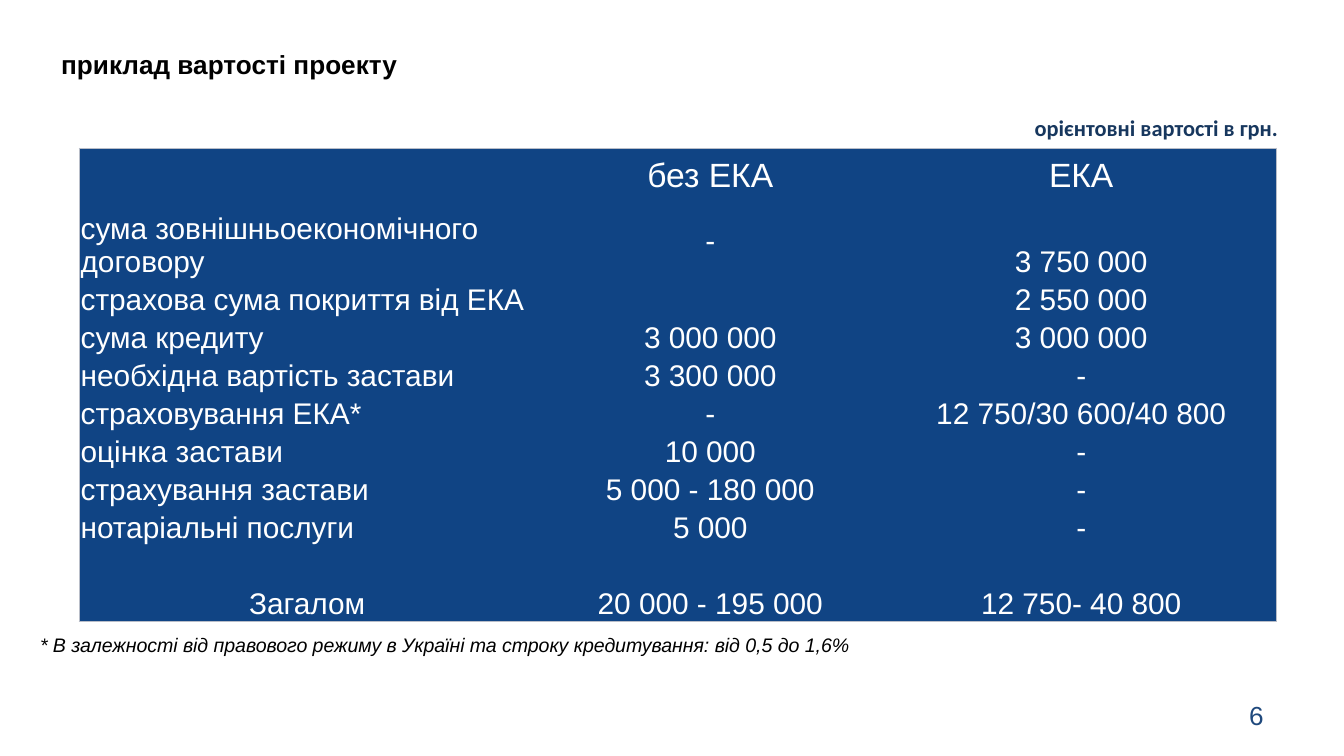
from lxml.etree import SubElement
from pptx import Presentation
from pptx.dml.color import RGBColor
from pptx.enum.text import MSO_ANCHOR as Anchor, MSO_AUTO_SIZE as AutoSize, PP_ALIGN as Align
from pptx.oxml.ns import qn
from pptx.util import Emu, Pt

EMU_PER_PX = 4572
NAVY, BLUE, PANEL, EDGE = "17375E", "1F497D", "104484", "B8BDC8"
COLUMNS = (678, 522, 582)
COSTS = [
    ("", "без ЕКА", "ЕКА"),
    ("сума зовнішньоекономічного договору", "-", "3 750 000"),
    ("страхова сума покриття від ЕКА", "", "2 550 000"),
    ("сума кредиту", "3 000 000", "3 000 000"),
    ("необхідна вартість застави", "3 300 000", "-"),
    ("страховування ЕКА*", "-", "12 750/30 600/40 800"),
    ("оцінка застави", "10 000", "-"),
    ("страхування застави", "5 000 - 180 000", "-"),
    ("нотаріальні послуги", "5 000", "-"),
    ("", "", ""),
    ("Загалом", "20 000 - 195 000", "12 750- 40 800"),
]


def px(length):
    return Emu(length * EMU_PER_PX)


def rgb(code):
    return RGBColor.from_string(code)


def write(frame, text, size=16, color="000000", font="Arial", bold=False, italic=False, align=Align.LEFT):
    paragraph = frame.paragraphs[0]
    paragraph.alignment = align
    if not text:
        SubElement(paragraph._p, qn("a:endParaRPr"), sz=str(size * 100))
        return
    run = paragraph.add_run()
    run.text = text
    run.font.size, run.font.name = Pt(size), font
    run.font.bold, run.font.italic = bold, italic
    run.font.color.rgb = rgb(color)


class CostSlide:
    """Holds the slide and the shared style of its elements."""

    def __init__(self, deck):
        self.slide = deck.slides.add_slide(deck.slide_layouts[5])

    def title(self, text, left, top, width, height, **style):
        heading = self.slide.shapes.title
        heading.left, heading.top = px(left), px(top)
        heading.width, heading.height = px(width), px(height)
        frame = heading.text_frame
        frame.auto_size = AutoSize.NONE
        frame.vertical_anchor = Anchor.MIDDLE
        write(frame, text, **style)

    def label(self, text, left, top, width, height, wrap=False, anchor=Anchor.TOP, **style):
        frame = self.slide.shapes.add_textbox(px(left), px(top), px(width), px(height)).text_frame
        frame.word_wrap = wrap
        frame.vertical_anchor = anchor
        write(frame, text, **style)

    def border(self, cell, sides):
        properties = cell._tc.get_or_add_tcPr()
        for side in sides:
            line = SubElement(properties, qn(f"a:ln{side}"), w=str(Pt(0.75)))
            fill = SubElement(line, qn("a:solidFill"))
            SubElement(fill, qn("a:srgbClr"), val=EDGE)

    def cost_table(self, costs, left, top, width, height):
        last_row, last_column = len(costs) - 1, len(COLUMNS) - 1
        table = self.slide.shapes.add_table(
            len(costs), len(COLUMNS), px(left), px(top), px(width), px(height)).table
        table.first_row = table.horz_banding = False
        style_id = table._tbl.tblPr.find(qn("a:tableStyleId"))
        style_id.text = "{2D5ABB26-0587-4C30-8999-92F81FD0307C}"
        for column, column_width in zip(table.columns, COLUMNS):
            column.width = px(column_width)
        header, contract = px(80), px(114)
        table.rows[0].height, table.rows[1].height = header, contract
        for row in list(table.rows)[2:]:
            row.height = Emu((px(height) - header - contract) // (last_row - 1))
        for r, values in enumerate(costs):
            for c, value in enumerate(values):
                cell = table.cell(r, c)
                edges = {"L": c == 0, "R": c == last_column, "T": r == 0, "B": r == last_row}
                self.border(cell, [side for side, outer in edges.items() if outer])
                cell.fill.solid()
                cell.fill.fore_color.rgb = rgb(PANEL)
                cell.margin_left = cell.margin_right = cell.margin_top = px(2)
                cell.margin_bottom = 0
                middle = r == 0 or (r, c) == (1, 1)
                cell.vertical_anchor = Anchor.MIDDLE if middle else Anchor.BOTTOM
                item_name = c == 0 and r < last_row
                write(cell.text_frame, value, size=18 if r == 0 else 16, color="FFFFFF",
                      align=Align.LEFT if item_name else Align.CENTER)


def main():
    deck = Presentation()
    deck.slide_width, deck.slide_height = px(2000), px(1125)
    page = CostSlide(deck)
    page.title("приклад вартості проекту", 71, 42, 1830, 106, size=14, bold=True)
    page.label("6", 1434, 1034, 466, 60, wrap=True, anchor=Anchor.MIDDLE,
               size=14, color=BLUE, align=Align.RIGHT)
    page.label("орієнтовні вартості в грн.", 1520, 160, 406, 60,
               size=12, font="Calibri", color=NAVY, bold=True)
    page.label("* В залежності від правового режиму в Україні та строку кредитування: від 0,5 до 1,6%",
               40, 932, 1272, 56, size=10.5, italic=True)
    page.cost_table(COSTS, 118, 221, sum(COLUMNS), 704)
    deck.save("out.pptx")


if __name__ == "__main__":
    main()
